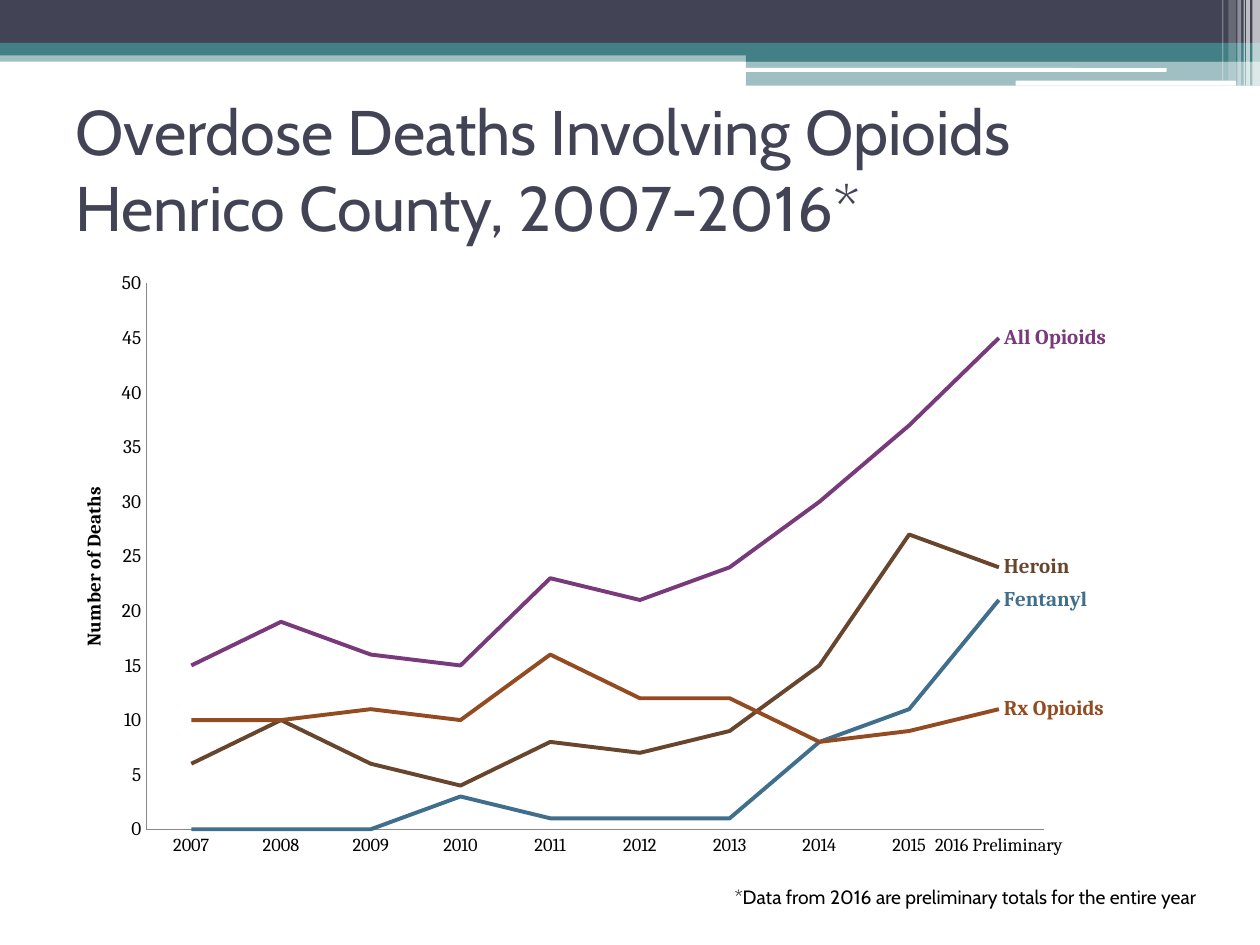
from dataclasses import dataclass
from typing import NamedTuple

import pptx
import pptx.chart.data
import pptx.dml.color
import pptx.enum.chart
import pptx.enum.shapes
import pptx.enum.text
import pptx.oxml
import pptx.oxml.ns
import pptx.util

WIDTH, HEIGHT = pptx.util.Inches(10), pptx.util.Inches(7.5)
COLUMNS, ROWS = 1000, 750

SHAPES = pptx.enum.shapes.MSO_SHAPE
ALIGN = pptx.enum.text.PP_ALIGN
MIDDLE = pptx.enum.text.MSO_ANCHOR.MIDDLE
CHART = pptx.enum.chart


@dataclass(frozen=True)
class Theme:
    navy: str = "424456"
    teal: str = "438086"
    white: str = "FFFFFF"
    black: str = "000000"
    axis: str = "888888"
    text_font: str = "Cabin"
    chart_font: str = "Cambria"
    title_size: float = 36
    note_size: float = 11
    year_size: float = 10.5
    axis_size: float = 11
    label_size: float = 12
    series_width: float = 2.25


THEME = Theme()


class Area(NamedTuple):
    """Left, top, width and height in grid columns and rows."""
    left: float
    top: float
    width: float
    height: float

    def lengths(self) -> tuple:
        across, down = WIDTH / COLUMNS, HEIGHT / ROWS
        return (round(self.left * across), round(self.top * down),
                round(self.width * across), round(self.height * down))


class Bar(NamedTuple):
    area: Area
    color: str
    opacity: int = 100
    rounded: bool = False


class Trend(NamedTuple):
    name: str
    color: str
    deaths: tuple


HEADER_BARS = [
    Bar(Area(0, 40, 1000, 9), THEME.teal, 50),
    Bar(Area(0, 0, 1000, 34), THEME.navy),
    Bar(Area(0, 34, 1000, 10), THEME.teal),
    Bar(Area(592, 39, 408, 10), THEME.teal),
    Bar(Area(592, 48, 408, 20), THEME.teal, 50),
    Bar(Area(591, 54, 335, 3), THEME.white, rounded=True),
    Bar(Area(806, 64, 175, 4), THEME.white, rounded=True),
]
# Left, width, height and opacity of the stripes at the right edge
STRIPES = [(994, 6, 68, 65), (989, 3, 68, 65), (987, 1, 68, 60),
           (982, 3, 68, 40), (975, 6, 64, 20), (970, 1, 64, 30)]

YEARS = [str(year) for year in range(2007, 2016)] + ["2016 Preliminary"]
TRENDS = [
    Trend("All Opioids", "783A7A", (15, 19, 16, 15, 23, 21, 24, 30, 37, 45)),
    Trend("Heroin", "68462E", (6, 10, 6, 4, 8, 7, 9, 15, 27, 24)),
    Trend("Fentanyl", "406F8D", (0, 0, 0, 3, 1, 1, 1, 8, 11, 21)),
    Trend("Rx Opioids", "934C22", (10, 10, 11, 10, 16, 12, 12, 8, 9, 11)),
]


def rgb(color: str):
    return pptx.dml.color.RGBColor.from_string(color)


def set_font(font, *, size: float, color: str, name: str, bold: bool = False) -> None:
    font.size, font.name, font.bold = pptx.util.Pt(size), name, bold
    font.color.rgb = rgb(color)


def write_text(frame, text: str, *, size: float, color: str,
               name: str = THEME.text_font, bold: bool = False, align=ALIGN.LEFT) -> None:
    para = frame.paragraphs[0]
    para.alignment = align
    span = para.add_run()
    span.text = text
    set_font(span.font, size=size, color=color, name=name, bold=bold)


def draw_bar(slide, bar: Bar):
    kind = SHAPES.ROUNDED_RECTANGLE if bar.rounded else SHAPES.RECTANGLE
    box = slide.shapes.add_shape(kind, *bar.area.lengths())
    box.shadow.inherit = False
    box.line.fill.background()
    box.fill.solid()
    box.fill.fore_color.rgb = rgb(bar.color)
    if bar.opacity < 100:
        color = box.fill._xPr.find(".//" + pptx.oxml.ns.qn("a:srgbClr"))
        pptx.oxml.ns.qn("a:alpha")
        color.append(pptx.oxml.parse_xml(
            f'<a:alpha {pptx.oxml.ns.nsdecls("a")} val="{bar.opacity * 1000}"/>'))
    return box


def place_chart_part(part, index: int, **shares: float) -> None:
    """Fix a plot area or title at shares of the chart's size."""
    old = part.find(pptx.oxml.ns.qn("c:layout"))
    if old is not None:
        part.remove(old)
    target = '<c:layoutTarget val="inner"/>' if "w" in shares else ""
    modes = "".join(f'<c:{key}Mode val="edge"/>' for key in "xy")
    sizes = "".join(f'<c:{key} val="{share}"/>' for key, share in shares.items())
    part.insert(index, pptx.oxml.parse_xml(
        f'<c:layout {pptx.oxml.ns.nsdecls("c")}><c:manualLayout>'
        f"{target}{modes}{sizes}</c:manualLayout></c:layout>"))


def style_axis(axis, size: float) -> None:
    axis.has_major_gridlines = False
    axis.major_tick_mark = axis.minor_tick_mark = CHART.XL_TICK_MARK.NONE
    axis.format.line.color.rgb = rgb(THEME.axis)
    axis.format.line.width = pptx.util.Pt(0.75)
    set_font(axis.tick_labels.font, size=size, color=THEME.black, name=THEME.chart_font)


def style_series(series, trend: Trend) -> None:
    """Colour the line and name it at its last point."""
    series.smooth = False
    series.marker.style = CHART.XL_MARKER_STYLE.NONE
    series.format.line.color.rgb = rgb(trend.color)
    series.format.line.width = pptx.util.Pt(THEME.series_width)
    series.data_labels.show_value = False
    label = series.points[len(YEARS) - 1].data_label
    set_font(label.font, size=THEME.label_size, color=trend.color,
             name=THEME.chart_font, bold=True)
    label.position = CHART.XL_LABEL_POSITION.RIGHT
    element = series._element.find(".//" + pptx.oxml.ns.qn("c:dLbl"))
    for tag, shown in (("c:showVal", "0"), ("c:showSerName", "1")):
        element.find(pptx.oxml.ns.qn(tag)).set("val", shown)


def draw_chart(slide, area: Area) -> None:
    data = pptx.chart.data.CategoryChartData(number_format="###0")
    data.categories = YEARS
    for trend in TRENDS:
        data.add_series(trend.name, trend.deaths)
    chart = slide.shapes.add_chart(CHART.XL_CHART_TYPE.LINE, *area.lengths(), data).chart
    chart.has_legend = chart.has_title = False
    set_font(chart.font, size=10, color=THEME.black, name=THEME.chart_font)
    chart.plots[0].vary_by_categories = False

    style_axis(chart.category_axis, THEME.year_size)
    deaths = chart.value_axis
    style_axis(deaths, THEME.axis_size)
    deaths.minimum_scale, deaths.maximum_scale, deaths.major_unit = 0, 50, 5
    deaths.tick_labels.number_format = "###0"
    deaths.tick_labels.number_format_is_linked = False
    write_text(deaths.axis_title.text_frame, "Number of Deaths", size=THEME.axis_size,
               color=THEME.black, name=THEME.chart_font, bold=True, align=ALIGN.CENTER)
    title = deaths._element.find(pptx.oxml.ns.qn("c:title"))
    place_chart_part(title, 1, x=0.03, y=0.36)
    plot_area = chart._chartSpace.find(".//" + pptx.oxml.ns.qn("c:plotArea"))
    place_chart_part(plot_area, 0, x=0.09, y=0.074, w=0.77, h=0.782)

    for series, trend in zip(chart.plots[0].series, TRENDS):
        style_series(series, trend)


def main() -> None:
    deck = pptx.Presentation()
    deck.slide_width, deck.slide_height = WIDTH, HEIGHT
    slide = deck.slides.add_slide(deck.slide_layouts[6])

    stripes = [Bar(Area(left, 0, width, height), THEME.white, opacity)
               for left, width, height, opacity in STRIPES]
    for bar in HEADER_BARS + stripes:
        draw_bar(slide, bar)

    title = slide.shapes.add_textbox(*Area(50, 75, 900, 117).lengths()).text_frame
    title.word_wrap, title.vertical_anchor = True, MIDDLE
    write_text(title, "Overdose Deaths Involving Opioids Henrico County, 2007-2016*",
               size=THEME.title_size, color=THEME.navy)

    note = draw_bar(slide, Bar(Area(550, 683, 433, 57), THEME.white, rounded=True)).text_frame
    note.word_wrap, note.vertical_anchor = True, MIDDLE
    write_text(note, "*Data from 2016 are preliminary totals for the entire year",
               size=THEME.note_size, color=THEME.black, align=ALIGN.CENTER)

    draw_chart(slide, Area(33, 184, 925, 554))
    deck.save("out.pptx")


if __name__ == "__main__":
    main()
